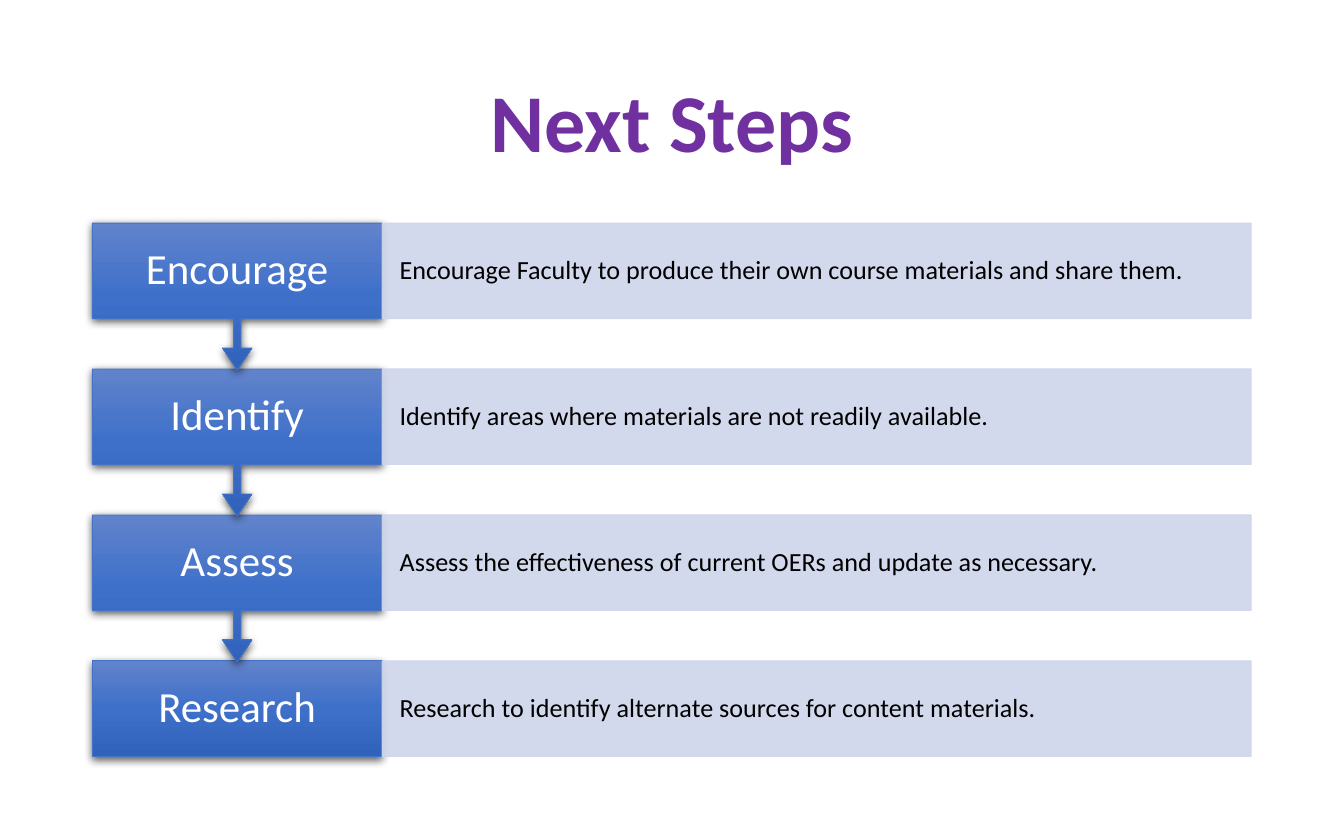
from dataclasses import dataclass

from lxml.etree import SubElement
from pptx import Presentation
from pptx.dml.color import RGBColor
from pptx.enum.shapes import MSO_SHAPE
from pptx.enum.text import MSO_ANCHOR, PP_ALIGN
from pptx.oxml.ns import qn
from pptx.util import Pt


@dataclass(frozen=True)
class Theme:
    """Hold the colours, font and type sizes of the slide."""
    font: str = "Calibri"
    title_color: str = "7030A0"
    label_color: str = "FFFFFF"
    detail_color: str = "000000"
    step_line: str = "4472C4"
    step_gradient: tuple = ((0, "6183CB"), (50, "3E70CA"), (100, "3062BB"))
    panel_color: str = "CFD5EA"
    panel_opacity: int = 90
    shadow_color: str = "000000"
    shadow_opacity: int = 63
    title_size: int = 44
    label_size: int = 23
    detail_size: int = 14


THEME = Theme()
STEPS = (
    ("Encourage", "Encourage Faculty to produce their own course materials and share them."),
    ("Identify", "Identify areas where materials are not readily available."),
    ("Assess", "Assess the effectiveness of current OERs and update as necessary."),
    ("Research", "Research to identify alternate sources for content materials."),
)
LEFT, TOP = 49.5, 119.5
STEP_WIDTH, PANEL_WIDTH = 155.2, 465.6
ROW_PITCH, BOX_HEIGHT = 78.2, 51.2
BOX_SHARE = 0.65


def write_text(shape, text, *, size, color, bold=False, align=PP_ALIGN.LEFT, margins=(7.2, 3.6)):
    """Fill a shape with one formatted, vertically centred paragraph."""
    frame = shape.text_frame
    frame.word_wrap = True
    frame.vertical_anchor = MSO_ANCHOR.MIDDLE
    frame.margin_left = frame.margin_right = Pt(margins[0])
    frame.margin_top = frame.margin_bottom = Pt(margins[1])
    paragraph = frame.paragraphs[0]
    paragraph.text = text
    paragraph.alignment = align
    paragraph.line_spacing = 0.9
    font = paragraph.font
    font.name, font.size, font.bold = THEME.font, Pt(size), bold
    font.color.rgb = RGBColor.from_string(color)


def add_box(slide, kind, left, top, width, height, line_color):
    """Add a preset shape with a thin outline and no shadow."""
    shape = slide.shapes.add_shape(kind, Pt(left), Pt(top), Pt(width), Pt(height))
    shape.shadow.inherit = False
    shape.line.color.rgb = RGBColor.from_string(line_color)
    shape.line.width = Pt(0.5)
    return shape


def set_opacity(color_element, percent):
    """Give a colour element an opacity."""
    SubElement(color_element, qn("a:alpha"), val=str(percent * 1000))


def apply_gradient(shape, stops):
    """Fill a shape with a gradient running from top to bottom."""
    shape.fill.gradient()
    shape.fill.gradient_angle = 270
    stop_list = shape._element.spPr.find(".//" + qn("a:gsLst"))
    for stop in list(stop_list):
        stop_list.remove(stop)
    for position, color in stops:
        stop = SubElement(stop_list, qn("a:gs"), pos=str(position * 1000))
        SubElement(stop, qn("a:srgbClr"), val=color)


def apply_shadow(shape):
    """Add a soft shadow just below a shape."""
    effects = shape._element.spPr.find(qn("a:effectLst"))
    shadow = SubElement(effects, qn("a:outerShdw"), blurRad=str(Pt(4.5)), dist=str(Pt(1.5)),
                        dir="5400000", algn="ctr", rotWithShape="0")
    set_opacity(SubElement(shadow, qn("a:srgbClr"), val=THEME.shadow_color), THEME.shadow_opacity)


def add_title(slide, text):
    """Add the centred slide title."""
    title = slide.shapes.add_textbox(Pt(49.5), Pt(24), Pt(621), Pt(87))
    write_text(title, text, size=THEME.title_size, color=THEME.title_color, bold=True,
               align=PP_ALIGN.CENTER)


def add_step(slide, label, top, is_last):
    """Add a step label, with an arrow to the next step unless it is the last."""
    kind = MSO_SHAPE.RECTANGLE if is_last else MSO_SHAPE.DOWN_ARROW_CALLOUT
    height = BOX_HEIGHT if is_last else BOX_HEIGHT / BOX_SHARE
    step = add_box(slide, kind, LEFT, top, STEP_WIDTH, height, THEME.step_line)
    if not is_last:
        for index, value in enumerate((0.05, 0.1, 0.15, BOX_SHARE)):
            step.adjustments[index] = value
    apply_gradient(step, THEME.step_gradient)
    apply_shadow(step)
    write_text(step, label, size=THEME.label_size, color=THEME.label_color,
               align=PP_ALIGN.CENTER, margins=(11, 13))


def add_panel(slide, detail, top):
    """Add the pale panel that describes a step."""
    panel = add_box(slide, MSO_SHAPE.RECTANGLE, LEFT + STEP_WIDTH, top, PANEL_WIDTH, BOX_HEIGHT,
                    THEME.panel_color)
    panel.fill.solid()
    panel.fill.fore_color.rgb = RGBColor.from_string(THEME.panel_color)
    for color_element in panel._element.spPr.iter(qn("a:srgbClr")):
        set_opacity(color_element, THEME.panel_opacity)
    write_text(panel, detail, size=THEME.detail_size, color=THEME.detail_color,
               margins=(9.4, 13.7))


def main():
    """Build and save the slide, stacking each arrow over the step below."""
    presentation = Presentation()
    presentation.slide_width, presentation.slide_height = Pt(720), Pt(450)
    slide = presentation.slides.add_slide(presentation.slide_layouts[6])
    add_title(slide, "Next Steps")
    last = len(STEPS) - 1
    for index, (label, detail) in reversed(list(enumerate(STEPS))):
        top = TOP + index * ROW_PITCH
        add_step(slide, label, top, index == last)
        add_panel(slide, detail, top)
    presentation.save("out.pptx")


if __name__ == "__main__":
    main()
